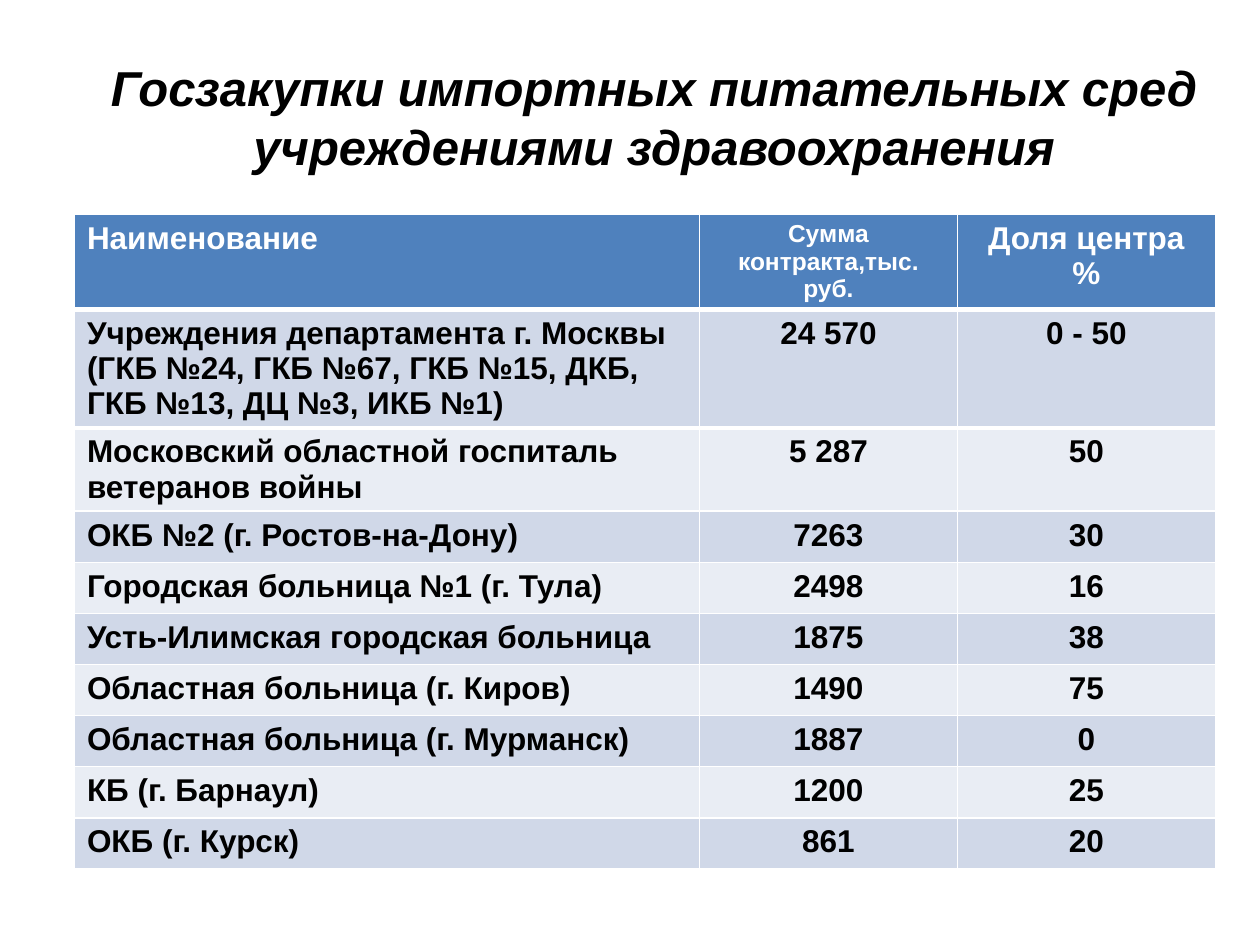
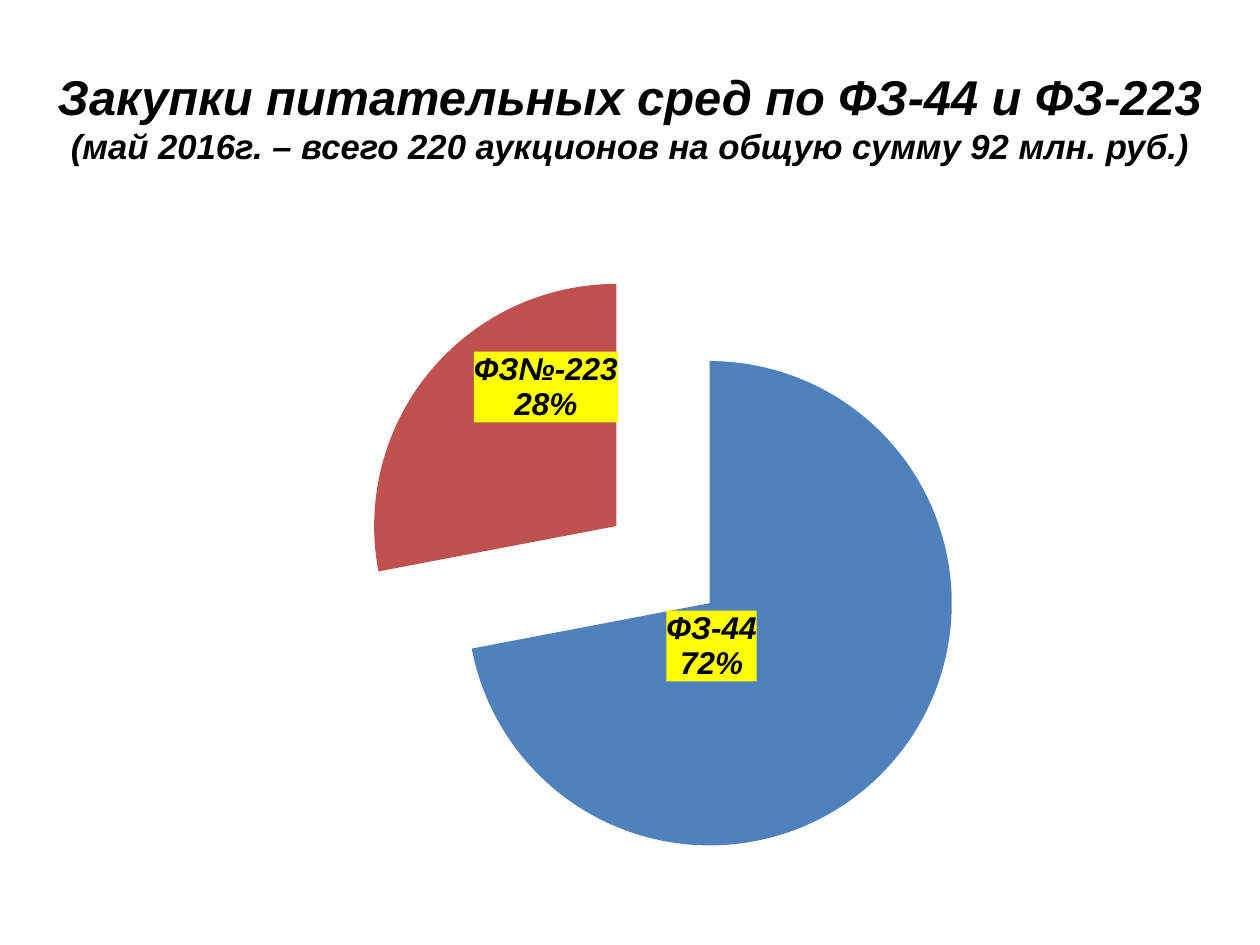
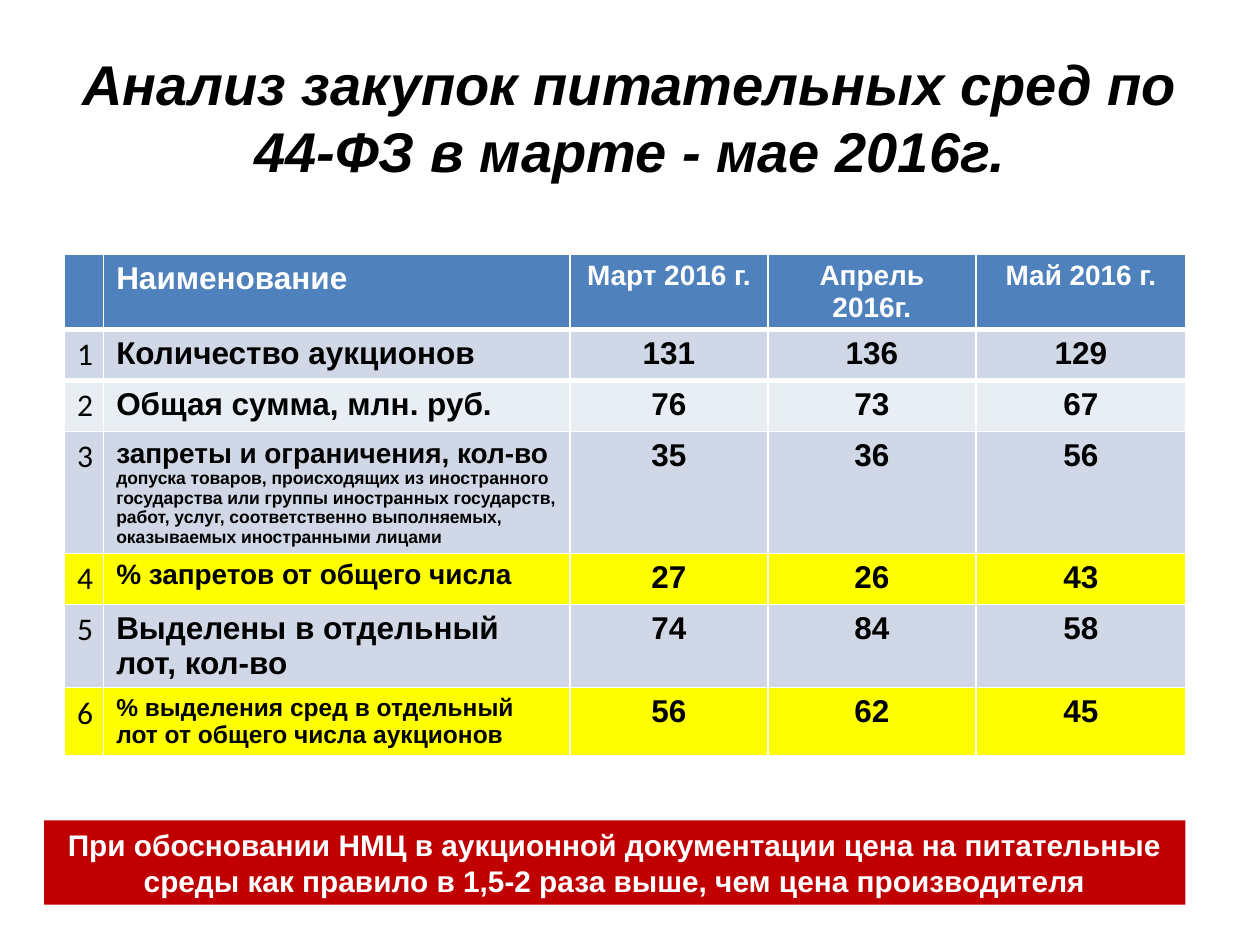
"""Build three slides on public purchases of culture media."""
from dataclasses import dataclass

from pptx import Presentation
from pptx.chart.data import CategoryChartData
from pptx.dml.color import RGBColor
from pptx.enum.chart import XL_CHART_TYPE
from pptx.enum.shapes import MSO_SHAPE
from pptx.enum.text import MSO_ANCHOR, MSO_AUTO_SIZE, PP_ALIGN
from pptx.oxml import parse_xml
from pptx.oxml.ns import nsdecls, qn
from pptx.util import Cm, Pt

LEFT, CENTER = PP_ALIGN.LEFT, PP_ALIGN.CENTER
MIDDLE = MSO_ANCHOR.MIDDLE
NO_FIT = MSO_AUTO_SIZE.NONE
PIE = XL_CHART_TYPE.PIE
RECTANGLE = MSO_SHAPE.RECTANGLE
TITLE_ONLY = 5


@dataclass(frozen=True)
class Theme:
    """Colours, fonts and type sizes of the deck."""
    font: str = "Arial"
    number_font: str = "Calibri"
    ink: str = "000000"
    paper: str = "FFFFFF"
    header: str = "4F81BD"
    bands: tuple = ("D0D8E8", "E9EDF4")
    mark: str = "FFFF00"
    slices: tuple = ("4F81BD", "C0504D")
    alert: str = "C00000"
    body: float = 18
    label: float = 16
    small: float = 14
    note: float = 10
    banner: float = 17
    title: float = 28
    law_title: float = 27.9
    subtitle: float = 19.8
    big_title: float = 32
    header_rule: float = 3


THEME = Theme()

HOSPITALS = {
    "title": [("Госзакупки импортных питательных сред учреждениями здравоохранения", THEME.title)],
    "title_box": (1.27, 0.76, 23.83, 3.18),
    "table_box": (1.5, 4.32, 23.01, 13.56),
    "columns": (12.6, 5.2, 5.2),
    "rows": [
        ("Наименование", [("Сумма контракта,тыс. руб.", THEME.small)], "Доля центра\n%"),
        ("Учреждения департамента г. Москвы\n(ГКБ №24, ГКБ №67, ГКБ №15, ДКБ,\n"
         "ГКБ №13, ДЦ №3, ИКБ №1)", "24 570", "0 - 50"),
        ("Московский областной госпиталь ветеранов войны", "5 287", "50"),
        ("ОКБ №2 (г. Ростов-на-Дону)", "7263", "30"),
        ("Городская больница №1 (г. Тула)", "2498", "16"),
        ("Усть-Илимская городская больница", "1875", "38"),
        ("Областная больница (г. Киров)", "1490", "75"),
        ("Областная больница (г. Мурманск)", "1887", "0"),
        ("КБ (г. Барнаул)", "1200", "25"),
        ("ОКБ (г. Курск)", "861", "20"),
    ],
}

LAWS = {
    "title": [("Закупки питательных сред по ФЗ-44 и ФЗ-223\n", THEME.law_title),
              ("(май 2016г. – всего 220 аукционов на общую сумму 92 млн. руб.)", THEME.subtitle)],
    "title_box": (0.7, 0.76, 24, 3.18),
    "chart_box": (1.27, 4.45, 23.04, 13.87),
    "shares": {"ФЗ-44": 72, "ФЗ№-223": 28},
    "explosion": 25,
    "plot_area": (0.26, 0.06, 0.53, 0.88),
    "label_shifts": ((-0.08, -0.05), (0.02, -0.09)),
}

MONTHS = {
    "title": [("Анализ закупок питательных сред по 44-ФЗ в марте - мае 2016г.", THEME.big_title)],
    "title_box": (1.27, 0.76, 22.86, 3.18),
    "table_box": (1.3, 5.13, 22.63, 10.54),
    "columns": (0.79, 9.4, 3.99, 4.19, 4.24),
    "marked_rows": (4, 6),
    "rows": [
        ("", "Наименование", *([(month, THEME.label)] for month in
                               ("Март 2016 г.", "Апрель 2016г.", "Май 2016 г."))),
        ("1", "Количество аукционов", "131", "136", "129"),
        ("2", "Общая сумма, млн. руб.", "76", "73", "67"),
        ("3", [("запреты и ограничения, кол-во ", THEME.label),
               ("допуска товаров, происходящих из иностранного государства или группы "
                "иностранных государств, работ, услуг, соответственно выполняемых, "
                "оказываемых иностранными лицами", THEME.note)], "35", "36", "56"),
        ("4", [("% запретов от общего числа", THEME.label)], "27", "26", "43"),
        ("5", "Выделены в отдельный лот, кол-во", "74", "84", "58"),
        ("6", [("% выделения сред в отдельный лот от общего числа аукционов", THEME.small)],
         "56", "62", "45"),
    ],
}

BANNER = {
    "text": "При обосновании НМЦ в аукционной документации цена на питательные "
            "среды как правило в 1,5-2 раза выше, чем цена производителя",
    "box": (0.89, 16.54, 23.01, 1.7),
}
ROW_HEIGHT = 1.03


def lengths(box):
    return [Cm(value) for value in box]


def paint(fill, color):
    fill.solid()
    fill.fore_color.rgb = RGBColor.from_string(color)


def write(frame, content, *, size=THEME.body, color=THEME.ink, font=THEME.font,
          bold=True, italic=False, align=LEFT, soft_breaks=False):
    """Write a string or (text, size) spans, splitting lines at newlines."""
    spans = [(content, size)] if isinstance(content, str) else content
    para = frame.paragraphs[0]
    para.alignment = align
    for text, points in spans:
        for index, line in enumerate(text.split("\n")):
            if index and soft_breaks:
                para.add_line_break()
            elif index:
                para = frame.add_paragraph()
                para.alignment = align
            if not line:
                continue
            span = para.add_run()
            span.text = line
            span.font.name, span.font.size = font, Pt(points)
            span.font.bold, span.font.italic = bold, italic
            span.font.color.rgb = RGBColor.from_string(color)


def add_page(deck, content):
    page = deck.slides.add_slide(deck.slide_layouts[TITLE_ONLY])
    title = page.shapes.title
    title.left, title.top, title.width, title.height = lengths(content["title_box"])
    frame = title.text_frame
    frame.word_wrap, frame.auto_size, frame.vertical_anchor = True, NO_FIT, MIDDLE
    write(frame, content["title"], italic=True, align=CENTER, soft_breaks=True)
    return page


def add_header_rule(cell, side):
    """Draw the thick rule under the header on one side of a cell."""
    cell._tc.get_or_add_tcPr().insert(0, parse_xml(
        f'<a:{side} {nsdecls("a")} w="{Pt(THEME.header_rule)}"><a:solidFill>'
        f'<a:srgbClr val="{THEME.paper}"/></a:solidFill></a:{side}>'))


def add_grid(page, content, *, name_column=0):
    """Add a banded table; columns before name_column hold row numbers."""
    rows, columns = content["rows"], content["columns"]
    table = page.shapes.add_table(len(rows), len(columns), *lengths(content["table_box"])).table
    for column, width in zip(table.columns, columns):
        column.width = Cm(width)
    for number, values in enumerate(rows):
        table.rows[number].height = Cm(ROW_HEIGHT)
        is_header = number == 0
        if is_header:
            fill = THEME.header
        elif number in content.get("marked_rows", ()):
            fill = THEME.mark
        else:
            fill = THEME.bands[(number - 1) % 2]
        for position, value in enumerate(values):
            cell = table.cell(number, position)
            paint(cell.fill, fill)
            if number < 2:
                add_header_rule(cell, "lnB" if is_header else "lnT")
            is_number = position < name_column
            write(cell.text_frame, value, bold=not is_number,
                  color=THEME.paper if is_header else THEME.ink,
                  font=THEME.number_font if is_number else THEME.font,
                  align=CENTER if position > name_column else LEFT)


def manual_layout(names, values, target=""):
    parts = "".join(f'<c:{name} val="{value}"/>' for name, value in zip(names, values))
    return f"<c:layout><c:manualLayout>{target}{parts}</c:manualLayout></c:layout>"


def label_xml(shifts):
    """Return the label block with category and percentage on a marked ground."""
    look = (f'<c:spPr><a:solidFill><a:srgbClr val="{THEME.mark}"/></a:solidFill></c:spPr>'
            f'<c:txPr><a:bodyPr/><a:p><a:pPr><a:defRPr sz="{THEME.body * 100}" b="1" i="1">'
            f'<a:solidFill><a:srgbClr val="{THEME.ink}"/></a:solidFill>'
            f'<a:latin typeface="{THEME.font}"/></a:defRPr></a:pPr>'
            '<a:endParaRPr lang="ru-RU"/></a:p></c:txPr><c:dLblPos val="ctr"/>')
    flags = {"LegendKey": 0, "Val": 0, "CatName": 1, "SerName": 0, "Percent": 1, "BubbleSize": 0}
    look += "".join(f'<c:show{name} val="{value}"/>' for name, value in flags.items())
    look += "<c:separator>\n</c:separator>"
    points = "".join(f'<c:dLbl><c:idx val="{index}"/>{manual_layout("xy", shift)}{look}</c:dLbl>'
                     for index, shift in enumerate(shifts))
    return f'<c:dLbls {nsdecls("c", "a")}>{points}{look}</c:dLbls>'


def add_pie(page, content):
    data = CategoryChartData()
    data.categories = list(content["shares"])
    data.add_series("Series 1", list(content["shares"].values()))
    chart = page.shapes.add_chart(PIE, *lengths(content["chart_box"]), data).chart
    chart.has_legend = chart.has_title = False
    chart.font.name, chart.font.size = THEME.number_font, Pt(THEME.body)
    chart.font.color.rgb = RGBColor.from_string(THEME.ink)
    plot = chart.plots[0]
    plot.vary_by_categories = True
    series = plot.series[0]
    for index, color in enumerate(THEME.slices):
        paint(series.points[index].format.fill, color)
    node = series._element
    node.find(qn("c:dPt")).addprevious(
        parse_xml(f'<c:explosion {nsdecls("c")} val="{content["explosion"]}"/>'))
    node.find(qn("c:cat")).addprevious(parse_xml(label_xml(content["label_shifts"])))
    area = chart._chartSpace.chart.plotArea
    for layout in area.findall(qn("c:layout")):
        area.remove(layout)
    names = ("xMode", "yMode", "x", "y", "w", "h")
    layout = manual_layout(names, ("edge", "edge", *content["plot_area"]),
                           '<c:layoutTarget val="inner"/>')
    area.insert(0, parse_xml(layout.replace("<c:layout>", f'<c:layout {nsdecls("c")}>', 1)))


def add_banner(page, content):
    box = page.shapes.add_shape(RECTANGLE, *lengths(content["box"]))
    box.shadow.inherit = False
    paint(box.fill, THEME.alert)
    box.line.fill.background()
    frame = box.text_frame
    frame.word_wrap, frame.vertical_anchor = True, MIDDLE
    write(frame, content["text"], size=THEME.banner, color=THEME.paper, align=CENTER)


def main():
    deck = Presentation()
    deck.slide_width, deck.slide_height = Cm(25.4), Cm(19.05)
    add_grid(add_page(deck, HOSPITALS), HOSPITALS)
    add_pie(add_page(deck, LAWS), LAWS)
    page = add_page(deck, MONTHS)
    add_grid(page, MONTHS, name_column=1)
    add_banner(page, BANNER)
    deck.save("out.pptx")


if __name__ == "__main__":
    main()
